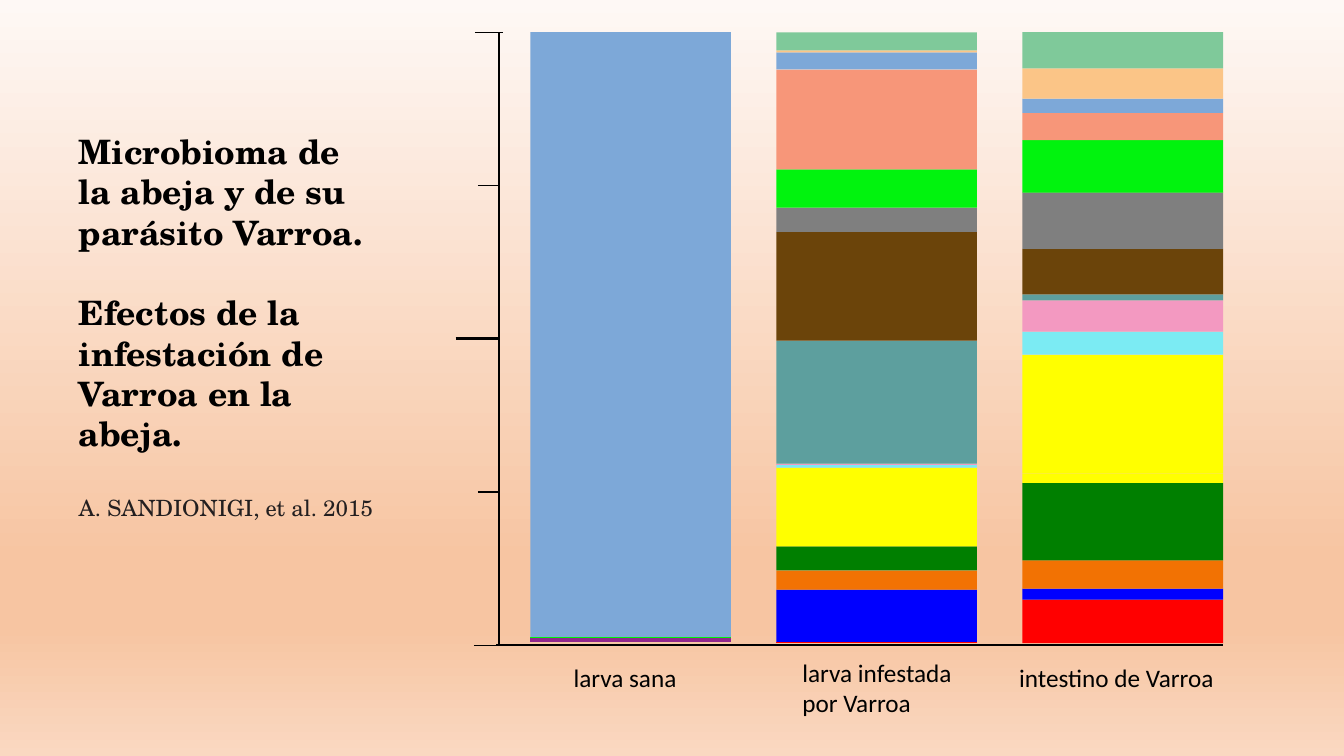
from lxml import etree
from pptx import Presentation
from pptx import util as u
from pptx.dml.color import RGBColor
from pptx.enum import shapes, text
from pptx.oxml.ns import qn

CELL = u.Inches(0.01)
COLUMNS, ROWS = 1333, 750
COLOURS = {
    "black": "000000", "ink": "231F20", "red": "FF0000", "blue": "0000FF",
    "orange": "F27203", "green": "007F00", "yellow": "FFFF00", "cyan": "7BEBF3",
    "pink": "F399C1", "teal": "5D9F9E", "brown": "6B440A", "grey": "7F7F7F",
    "lime": "01F30E", "salmon": "F79679", "sky": "7DA8D8", "sand": "FBC587",
    "mint": "7FC99A", "purple": "91268C",
}
BACKGROUND = [(0, "FEF8F5"), (74, "F7C5A2"), (83, "F7C5A2"), (100, "FAD8C1")]
HEADINGS = [
    ("Microbioma de la abeja y de su parásito Varroa.", 0,
     {"size": u.Pt(24), "bold": True}, "black"),
    ("Efectos de la infestación de Varroa en la abeja.", 28.8,
     {"size": u.Pt(24), "bold": True}, "black"),
    ("A. SANDIONIGI, et al. 2015", 28.8,
     {"size": u.Pt(16), "bold": False}, "ink"),
]
BARS = [
    {"base": 600, "segments": [("sky", 600)],
     "lines": [("purple", 603, 2.47), ("lime", 600, 0.62)]},
    {"base": 605, "segments": [
        ("blue", 52), ("orange", 19), ("green", 24), ("yellow", 19),
        ("yellow", 59), ("cyan", 4), ("teal", 122), ("brown", 108),
        ("grey", 24), ("lime", 38), ("salmon", 99), ("sky", 17),
        ("sand", 2), ("mint", 18)],
     "lines": [("red", 605, 0.56), ("pink", 428, 0.06)]},
    {"base": 606, "segments": [
        ("red", 43), ("blue", 11), ("orange", 28), ("green", 77),
        ("yellow", 9), ("yellow", 118), ("cyan", 23), ("pink", 31),
        ("teal", 6), ("brown", 45), ("grey", 56), ("lime", 52),
        ("salmon", 27), ("sky", 14), ("sand", 30), ("mint", 36)],
     "lines": []},
]
BAR_LEFT, BAR_PITCH, BAR_WIDTH = 74, 244, 199
AXIS_LEFT = 43
TICKS = [(19, 47, 1), (22, 43, 0.88), (0, 43, 1.75), (22, 43, 0.88), (18, 40, 0.88)]
LABELS = [
    ("larva sana", 107, 620, 174, 40),
    ("larva infestada por Varroa", 334, 615, 183, 71),
    ("intestino de Varroa", 549, 620, 224, 40),
]


def grid(*lengths):
    """Turn grid columns and rows into slide lengths."""
    return [round(length * CELL) for length in lengths]


def colour(name):
    """Look up a named colour."""
    return RGBColor.from_string(COLOURS[name])


def apply(target, formats):
    """Set each format value on the target."""
    for name, value in formats.items():
        setattr(target, name, value)


def add_line(slide, start_x, start_y, end_x, end_y, name, width):
    """Draw a straight line without a shadow."""
    line = slide.shapes.add_connector(
        shapes.MSO_CONNECTOR.STRAIGHT, *grid(start_x, start_y, end_x, end_y))
    line.line.color.rgb = colour(name)
    line.line.width = u.Pt(width)
    etree.SubElement(line._element.spPr, qn("a:effectLst"))


def paint_background(slide):
    """Fill the slide with a vertical gradient."""
    fill = slide.background.fill
    fill.gradient()
    fill.gradient_angle = 270
    stops = next(slide._element.iter(qn("a:gsLst")))
    stops.clear()
    for position, value in BACKGROUND:
        stop = etree.SubElement(stops, qn("a:gs"), pos=str(position * 1000))
        etree.SubElement(stop, qn("a:srgbClr"), val=value)


def write_headings(slide, box):
    """Set the headings and the citation in the title placeholder."""
    title = slide.shapes.title
    apply(title, dict(zip(("left", "top", "width", "height"), grid(*box))))
    frame = title.text_frame
    apply(frame, {"word_wrap": True, "auto_size": text.MSO_AUTO_SIZE.NONE,
                  "vertical_anchor": text.MSO_ANCHOR.TOP})
    for index, (words, gap, formats, name) in enumerate(HEADINGS):
        paragraph = frame.add_paragraph() if index else frame.paragraphs[0]
        apply(paragraph, {"alignment": text.PP_ALIGN.LEFT, "space_before": u.Pt(gap)})
        run = paragraph.add_run()
        run.text = words
        apply(run.font, {"name": "TeX Gyre Schola", **formats})
        run.font.color.rgb = colour(name)


def draw_bar(slide, left, top, bar):
    """Stack the segments of one bar upwards from its base."""
    edge = top + bar["base"]
    for name, height in bar["segments"]:
        edge -= height
        segment = slide.shapes.add_shape(
            shapes.MSO_SHAPE.RECTANGLE, *grid(left, edge, BAR_WIDTH, height))
        segment.shadow.inherit = False
        segment.fill.solid()
        segment.fill.fore_color.rgb = colour(name)
        segment.line.fill.background()
    for name, row, width in bar["lines"]:
        add_line(slide, left, top + row, left + BAR_WIDTH, top + row, name, width)


def draw_axes(slide, box):
    """Draw the base line, the vertical axis and its ticks."""
    left, top, width, height = box
    axis, bottom = left + AXIS_LEFT, top + height
    add_line(slide, axis - 3, bottom, left + width, bottom, "black", 1.75)
    add_line(slide, axis, top, axis, bottom, "black", 1.75)
    step = height / (len(TICKS) - 1)
    for index, (start, end, weight) in enumerate(TICKS):
        row = top + index * step
        add_line(slide, left + start, row, left + end, row, "black", weight)


def write_labels(slide, box):
    """Name each bar below the base line."""
    for words, column, row, width, height in LABELS:
        label = slide.shapes.add_textbox(
            *grid(box[0] + column, box[1] + row, width, height))
        label.text_frame.word_wrap = True
        run = label.text_frame.paragraphs[0].add_run()
        run.text = words
        apply(run.font, {"name": "Calibri", "size": u.Pt(18)})
        run.font.color.rgb = colour("black")


def draw_microbiome(slide, box):
    """Place the stacked bars, axes and labels in the box."""
    for index, bar in enumerate(BARS):
        draw_bar(slide, box[0] + BAR_LEFT + index * BAR_PITCH, box[1], bar)
    draw_axes(slide, box)
    write_labels(slide, box)


def main():
    """Build and save the presentation."""
    presentation = Presentation()
    width, height = grid(COLUMNS, ROWS)
    apply(presentation, {"slide_width": width, "slide_height": height})
    slide = presentation.slides.add_slide(presentation.slide_layouts[5])
    paint_background(slide)
    write_headings(slide, (68, 125, 314, 401))
    draw_microbiome(slide, (452, 32, 761, 608))
    presentation.save("out.pptx")


if __name__ == "__main__":
    main()
